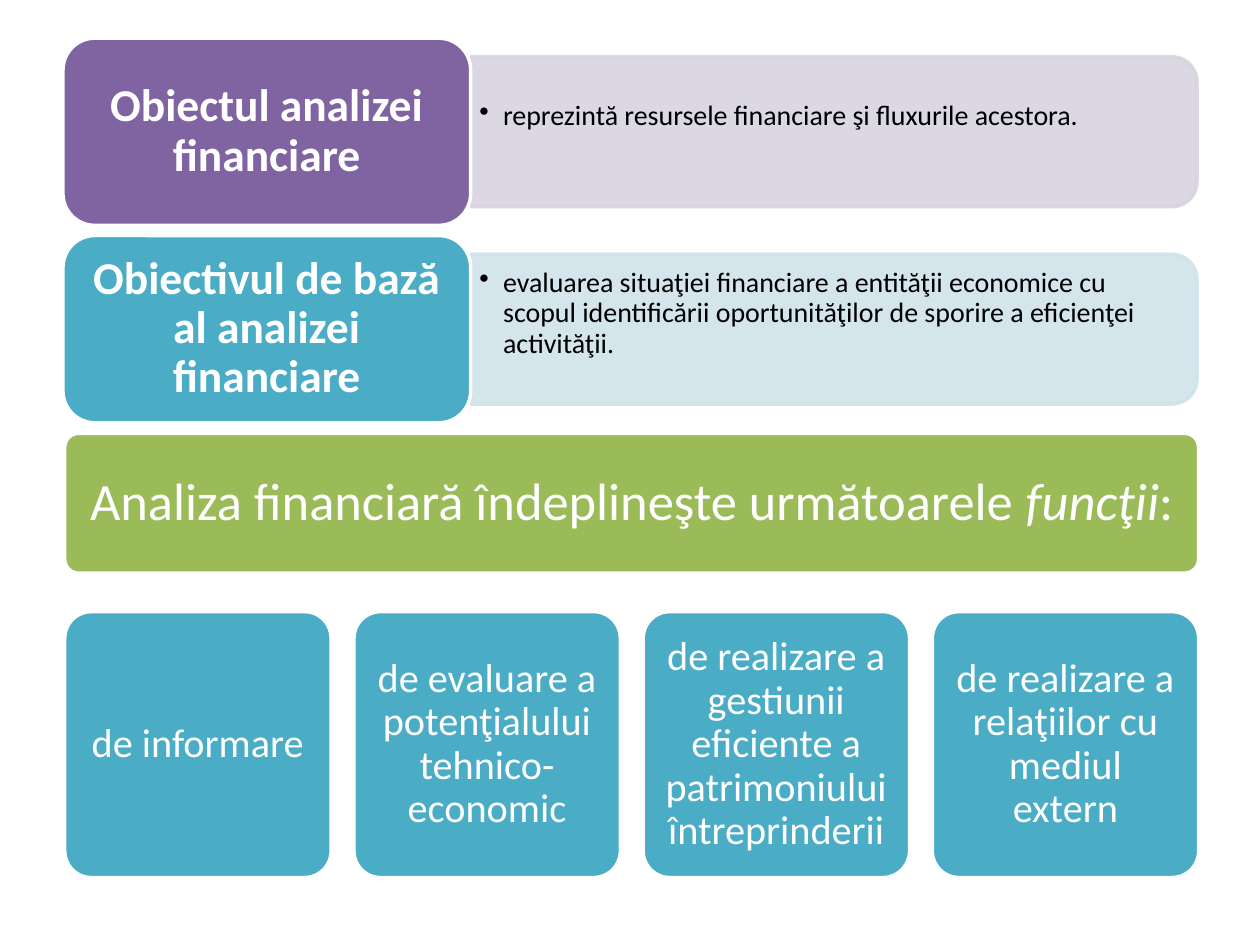
import pptx
import pptx.dml.color
import pptx.enum.shapes
import pptx.enum.text
import pptx.oxml
import pptx.oxml.ns
import pptx.util

Pt = pptx.util.Pt
RGBColor = pptx.dml.color.RGBColor
SHAPE = pptx.enum.shapes.MSO_SHAPE
ALIGN = pptx.enum.text.PP_ALIGN
ANCHOR = pptx.enum.text.MSO_ANCHOR

WHITE = RGBColor(0xFF, 0xFF, 0xFF)
BLACK = RGBColor(0x00, 0x00, 0x00)
PURPLE = RGBColor(0x80, 0x64, 0xA2)
PALE_PURPLE = RGBColor(0xD8, 0xD3, 0xE0)
TEAL = RGBColor(0x4B, 0xAC, 0xC6)
PALE_TEAL = RGBColor(0xD0, 0xE3, 0xEA)
GREEN = RGBColor(0x9B, 0xBB, 0x59)

DEFINITIONS = [
    ("Obiectul analizei financiare", PURPLE, PALE_PURPLE,
     "reprezintă resursele financiare şi fluxurile acestora."),
    ("Obiectivul de bază al analizei financiare", TEAL, PALE_TEAL,
     "evaluarea situaţiei financiare a entităţii economice cu scopul "
     "identificării oportunităţilor de sporire a eficienţei activităţii."),
]
BANNER_PARTS = ["Analiza financiară îndeplineşte următoarele ", "funcţii", ":"]
FUNCTIONS = [
    "de informare",
    "de evaluare a potenţialului tehnico-economic",
    "de realizare a gestiunii eficiente a patrimoniului întreprinderii",
    "de realizare a relaţiilor cu mediul extern",
]


def add_block(slide, kind, box, fill, line):
    block = slide.shapes.add_shape(kind, *(Pt(length) for length in box))
    block.shadow.inherit = False
    block.fill.solid()
    block.fill.fore_color.rgb = fill
    block.line.color.rgb = line
    block.line.width = Pt(2)
    return block


def set_insets(frame, left, top, right, bottom):
    frame.word_wrap = True
    frame.vertical_anchor = ANCHOR.MIDDLE
    frame.margin_left, frame.margin_top = Pt(left), Pt(top)
    frame.margin_right, frame.margin_bottom = Pt(right), Pt(bottom)


def format_runs(paragraph, size, color):
    paragraph.line_spacing = 0.9
    for run in paragraph.runs:
        run.font.name = "Calibri"
        run.font.size = Pt(size)
        run.font.color.rgb = color


def add_label(slide, box, parts, fill, size, inset, corner):
    """Add a filled rounded box with centred white text; return its paragraph."""
    label = add_block(slide, SHAPE.ROUNDED_RECTANGLE, box, fill, WHITE)
    label.adjustments[0] = corner
    set_insets(label.text_frame, *inset)
    paragraph = label.text_frame.paragraphs[0]
    paragraph.alignment = ALIGN.CENTER
    for part in parts:
        paragraph.add_run().text = part
    format_runs(paragraph, size, WHITE)
    return paragraph


def make_translucent(shape, percent):
    for color in shape.element.spPr.iter(pptx.oxml.ns.qn("a:srgbClr")):
        color.append(pptx.oxml.parse_xml(
            f'<a:alpha {pptx.oxml.ns.nsdecls("a")} val="{percent * 1000}"/>'))


def add_bullet(paragraph, indent):
    properties = paragraph._p.get_or_add_pPr()
    properties.set("marL", str(Pt(indent)))
    properties.set("indent", str(-Pt(indent)))
    properties.append(pptx.oxml.parse_xml(
        f'<a:buChar {pptx.oxml.ns.nsdecls("a")} char="•"/>'))


def add_definition(slide, box, heading, fill, pale_fill, explanation):
    left, top, width, height = box
    heading_width = 233
    panel_left, panel_width = left + heading_width, width - heading_width
    panel_height = height * 0.8
    panel_top = top + (height - panel_height) / 2

    # The panel is an upright shape turned a quarter about its centre.
    shift = (panel_width - panel_height) / 2
    panel = add_block(slide, SHAPE.ROUND_2_SAME_RECTANGLE,
                      (panel_left + shift, panel_top - shift, panel_height, panel_width),
                      pale_fill, pale_fill)
    panel.rotation = 90
    make_translucent(panel, 90)

    body = slide.shapes.add_textbox(Pt(panel_left), Pt(panel_top + 4),
                                    Pt(panel_width - 4), Pt(panel_height - 8))
    set_insets(body.text_frame, 5, 2.5, 5, 20)
    body.text_frame.text = explanation
    paragraph = body.text_frame.paragraphs[0]
    format_runs(paragraph, 16, BLACK)
    add_bullet(paragraph, 13.5)

    title = add_label(slide, (left, top, heading_width, height), [heading],
                      fill, 26, (8, 4, 8, 4), 0.17)
    title.runs[0].font.bold = True


def add_banner(slide, box):
    banner = add_label(slide, box, BANNER_PARTS, GREEN, 30, (8.4,) * 4, 0.1)
    banner.runs[1].font.italic = True


def add_functions(slide, box):
    left, top, width, height = box
    gap = 13
    tile_width = (width - gap * (len(FUNCTIONS) - 1)) / len(FUNCTIONS)
    for index, function in enumerate(FUNCTIONS):
        add_label(slide, (left + index * (tile_width + gap), top, tile_width, height),
                  [function], TEAL, 23, (7,) * 4, 0.1)


def main():
    deck = pptx.Presentation()
    deck.slide_width, deck.slide_height = Pt(720), Pt(540)
    slide = deck.slides.add_slide(deck.slide_layouts[6])
    for row, definition in enumerate(DEFINITIONS):
        add_definition(slide, (36, 21.8 + row * 112.8, 648, 107), *definition)
    add_banner(slide, (37, 247.6, 648, 80))
    add_functions(slide, (37, 349.5, 648, 152))
    deck.save("out.pptx")


if __name__ == "__main__":
    main()
